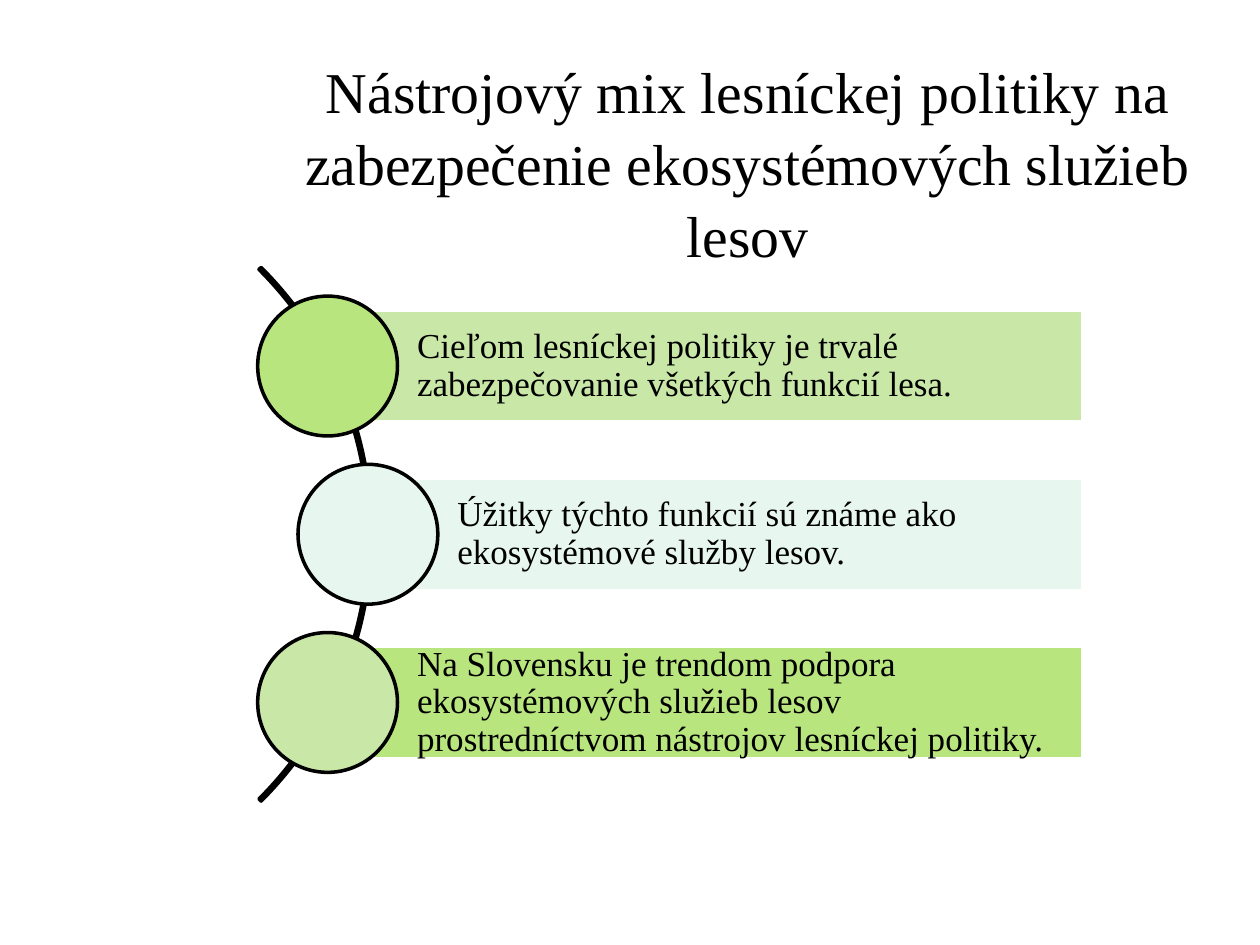
from pptx import Presentation
from pptx.dml.color import RGBColor
from pptx.enum import shapes, text
from pptx.util import Inches, Pt

TITLE = "Nástrojový mix lesníckej politiky na zabezpečenie ekosystémových služieb lesov"
POINTS = [
    ("Cieľom lesníckej politiky je trvalé zabezpečovanie všetkých funkcií lesa.",
     2.6, "lime", "bright"),
    ("Úžitky týchto funkcií sú známe ako ekosystémové služby lesov.",
     2.92, "mint", "mint"),
    ("Na Slovensku je trendom podpora ekosystémových služieb lesov "
     "prostredníctvom nástrojov lesníckej politiky.",
     2.6, "bright", "lime"),
]
THEME = {
    "font": "Times New Roman", "title": 33, "body": 20, "line": 2,
    "black": "000000", "white": "FFFFFF",
    "lime": "C9E7A7", "mint": "E7F6EF", "bright": "B9E57F",
}
MIDDLE, PITCH = 4.24, 1.335
BAR_RIGHT, BAR_HEIGHT, CIRCLE = 8.59, 0.89, 1.11
ARC_LEFT, ARC_SIZE = -3.04, 5.99


def color(name):
    return RGBColor.from_string(THEME[name])


def add_figure(slide, kind, left, center, width, height, fill, line):
    figure = slide.shapes.add_shape(
        kind, Inches(left), Inches(center - height / 2), Inches(width), Inches(height))
    figure.shadow.inherit = False
    figure.fill.solid()
    figure.fill.fore_color.rgb = color(fill)
    figure.line.color.rgb = color(line)
    figure.line.width = Pt(THEME["line"])
    return figure


def write(frame, words, size, align, spacing, anchor, insets):
    frame.word_wrap = True
    frame.vertical_anchor = anchor
    (frame.margin_left, frame.margin_top,
     frame.margin_right, frame.margin_bottom) = map(Inches, insets)
    paragraph = frame.paragraphs[0]
    paragraph.text = words
    paragraph.alignment = align
    paragraph.line_spacing = spacing
    paragraph.font.name = THEME["font"]
    paragraph.font.size = Pt(THEME[size])
    paragraph.font.color.rgb = color("black")


def main():
    deck = Presentation()
    deck.slide_width, deck.slide_height = Inches(10), Inches(7.5)
    slide = deck.slides.add_slide(deck.slide_layouts[6])
    kinds = shapes.MSO_SHAPE

    arc = add_figure(slide, kinds.BLOCK_ARC, ARC_LEFT, MIDDLE,
                     ARC_SIZE, ARC_SIZE, "black", "black")
    for index, value in enumerate((189, 27, 0.004)):
        arc.adjustments[index] = value

    for row, (words, left, bar_fill, circle_fill) in enumerate(POINTS):
        center = MIDDLE + (row - 1) * PITCH
        bar = add_figure(slide, kinds.RECTANGLE, left, center,
                         BAR_RIGHT - left, BAR_HEIGHT, bar_fill, "white")
        write(bar.text_frame, words, "body", text.PP_ALIGN.LEFT, 0.9,
              text.MSO_ANCHOR.MIDDLE, (0.71, 0.06, 0.06, 0.06))
        add_figure(slide, kinds.OVAL, left - CIRCLE / 2, center,
                   CIRCLE, CIRCLE, circle_fill, "black")

    title = slide.shapes.add_textbox(Inches(1.87), Inches(0.34), Inches(8.13), Inches(1.39))
    write(title.text_frame, TITLE, "title", text.PP_ALIGN.CENTER, 1.04,
          text.MSO_ANCHOR.TOP, (0.1, 0.08, 0.1, 0.05))

    deck.save("out.pptx")


if __name__ == "__main__":
    main()
